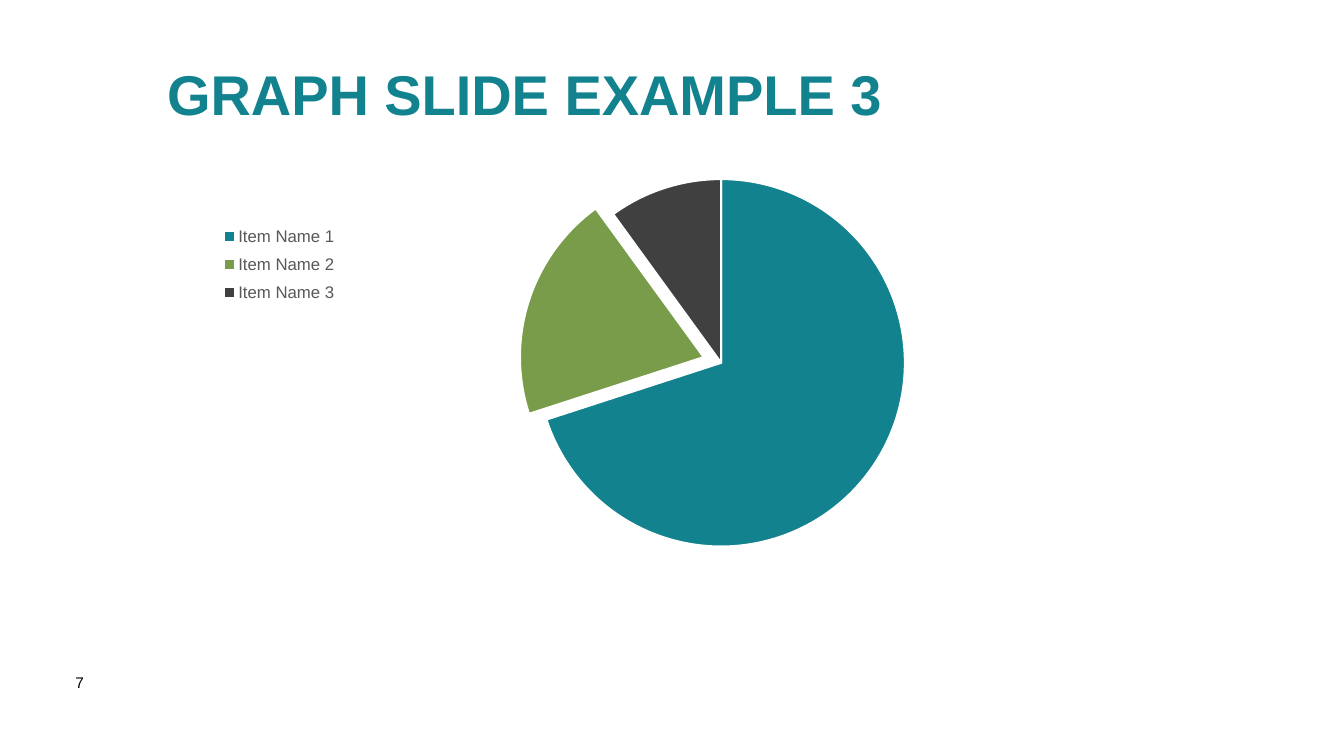
from dataclasses import dataclass

from lxml import etree
from pptx import Presentation
from pptx.chart.data import CategoryChartData
from pptx.dml.color import RGBColor
from pptx.enum import chart as charts, text
from pptx.oxml import ns
from pptx.util import Cm, Pt


@dataclass(frozen=True)
class Theme:
    font: str = "Arial"
    teal: str = "12828E"
    green: str = "789C49"
    charcoal: str = "404041"
    legend: str = "595959"
    black: str = "000000"
    white: str = "FFFFFF"
    title_size: float = 40
    legend_size: float = 12
    number_size: float = 11
    chart_size: float = 10


THEME = Theme()


def style_font(font, size, color, bold=False):
    font.name = THEME.font
    font.size = Pt(size)
    font.bold = bold
    font.color.rgb = RGBColor.from_string(color)


def add_text(page, words, area, size, color, bold=False,
             anchor=text.MSO_ANCHOR.TOP, spacing=1.0):
    box = page.shapes.add_textbox(*map(Cm, area))
    frame = box.text_frame
    frame.text = words
    frame.word_wrap = True
    frame.vertical_anchor = anchor
    para = frame.paragraphs[0]
    para.line_spacing = spacing
    style_font(para.runs[0].font, size, color, bold)


def set_layout(element, inner=False, **fractions):
    """Place a chart part by fractions of the chart area."""
    for old in element.findall(ns.qn("c:layout")):
        element.remove(old)
    layout = etree.Element(ns.qn("c:layout"))
    manual = etree.SubElement(layout, ns.qn("c:manualLayout"))
    settings = {"layoutTarget": "inner"} if inner else {}
    settings.update(xMode="edge", yMode="edge", **fractions)
    for name, value in settings.items():
        etree.SubElement(manual, ns.qn(f"c:{name}")).set("val", str(value))
    position = element.find(ns.qn("c:legendPos"))
    if position is None:
        element.insert(0, layout)
    else:
        position.addnext(layout)


def add_pie(page, area, items, exploded, explosion):
    data = CategoryChartData()
    data.categories = [name for name, _, _ in items]
    data.add_series("Series 1", [value for _, value, _ in items])
    chart = page.shapes.add_chart(
        charts.XL_CHART_TYPE.PIE, *map(Cm, area), data).chart
    chart.has_title = False
    style_font(chart.font, THEME.chart_size, THEME.black)

    # Slices
    plot = chart.plots[0]
    plot.vary_by_categories = True
    points = plot.series[0].points
    for index, (_, _, color) in enumerate(items):
        slice_format = points[index].format
        slice_format.fill.solid()
        slice_format.fill.fore_color.rgb = RGBColor.from_string(color)
        slice_format.line.color.rgb = RGBColor.from_string(THEME.white)
        slice_format.line.width = Pt(1.5)
    point = chart.element.findall(".//" + ns.qn("c:dPt"))[exploded]
    offset = etree.Element(ns.qn("c:explosion"))
    offset.set("val", str(explosion))
    point.find(ns.qn("c:spPr")).addprevious(offset)

    # Legend and plot positions
    chart.has_legend = True
    legend = chart.legend
    legend.position = charts.XL_LEGEND_POSITION.BOTTOM
    legend.include_in_layout = False
    style_font(legend.font, THEME.legend_size, THEME.legend)
    set_layout(chart.element.find(".//" + ns.qn("c:legend")),
               x=0.05, y=0.12, w=0.12, h=0.22)
    set_layout(chart.element.find(".//" + ns.qn("c:plotArea")), inner=True,
               x=0.34, y=0.03, w=0.33, h=0.86)


def main():
    deck = Presentation()
    deck.slide_width, deck.slide_height = Cm(33.87), Cm(19.05)
    page = deck.slides.add_slide(deck.slide_layouts[6])

    # Page number
    add_text(page, "7", (1.65, 16.84, 1.47, 1.37),
             THEME.number_size, THEME.black)

    # Pie chart
    items = [
        ("Item Name 1", 70, THEME.teal),
        ("Item Name 2", 20, THEME.green),
        ("Item Name 3", 10, THEME.charcoal),
    ]
    add_pie(page, (3.94, 4.19, 28.19, 10.77), items, exploded=1, explosion=10)

    # Title
    add_text(page, "GRAPH SLIDE EXAMPLE 3", (3.96, 1.27, 25.4, 2.39),
             THEME.title_size, THEME.teal, bold=True,
             anchor=text.MSO_ANCHOR.MIDDLE, spacing=0.9)

    deck.save("out.pptx")


if __name__ == "__main__":
    main()
